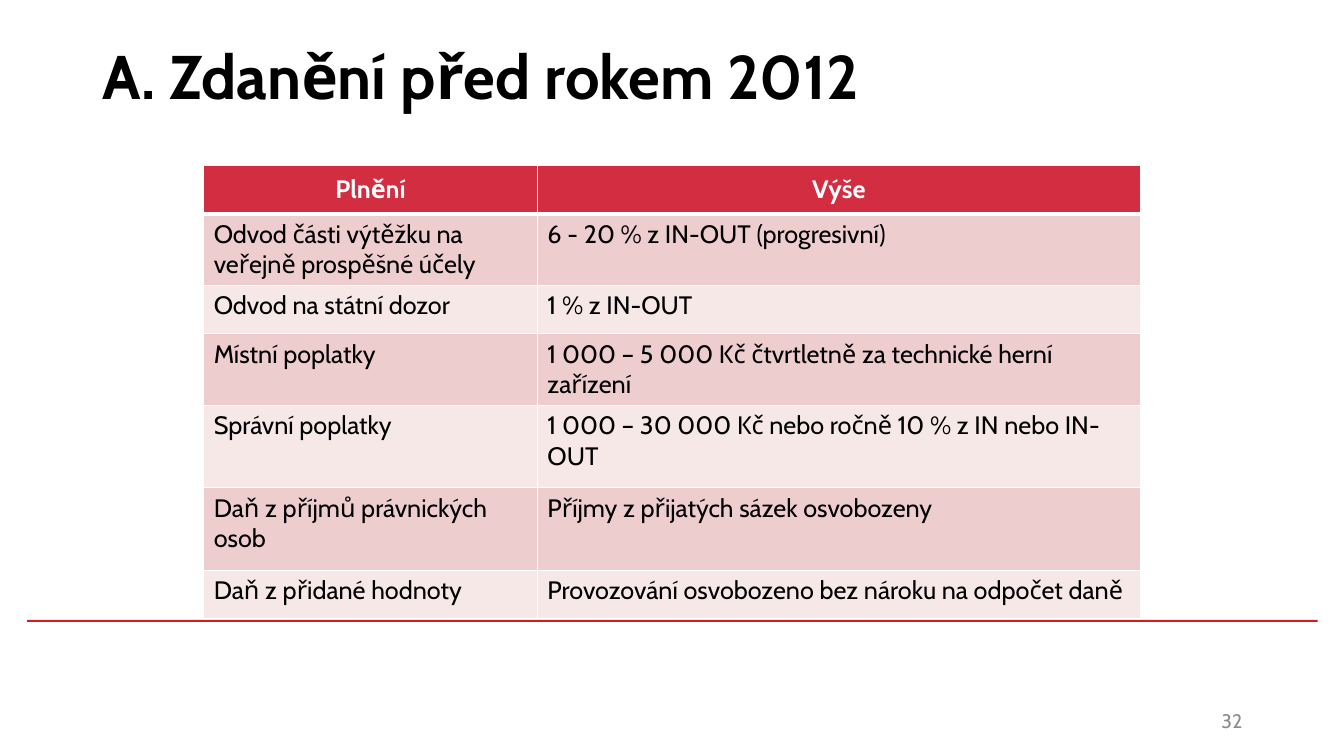
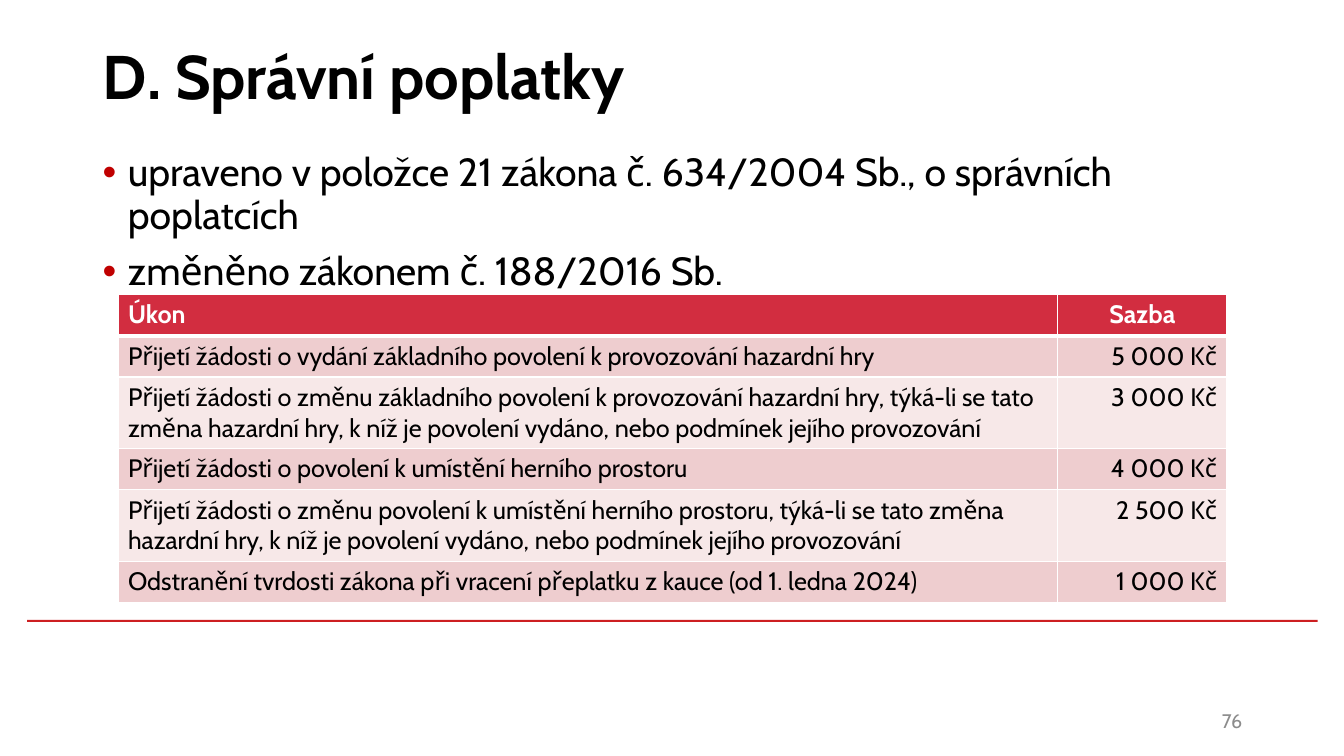
from dataclasses import dataclass

from lxml import etree
from pptx import Presentation
from pptx import util as u
from pptx.dml.color import RGBColor
from pptx.enum import shapes, text
from pptx.oxml import ns


@dataclass(frozen=True)
class Theme:
    font: str = "Cabin"
    ink: str = "000000"
    paper: str = "FFFFFF"
    rule: str = "CD1F21"
    bullet: str = "C00000"
    number: str = "8C8C8C"
    header: str = "D22D40"
    bands: tuple = ("EECDCF", "F7E8E8")
    title_size: int = 44
    body_size: int = 28
    table_size: int = 18
    number_size: int = 14
    border: int = 1
    header_border: int = 3


LEFT, CENTER, RIGHT = text.PP_ALIGN.LEFT, text.PP_ALIGN.CENTER, text.PP_ALIGN.RIGHT
TOP, MIDDLE = text.MSO_ANCHOR.TOP, text.MSO_ANCHOR.MIDDLE


def set_values(target, values):
    for name, value in values.items():
        setattr(target, name, value)


class Deck:
    def __init__(self, theme):
        self.theme = theme
        self.presentation = Presentation()
        set_values(self.presentation, {"slide_width": u.Inches(13.33), "slide_height": u.Inches(7.5)})
        self.slide = None

    def styled_run(self, paragraph, words, size, color, bold=False, align=LEFT):
        paragraph.alignment = align
        run = paragraph.add_run()
        run.text = words
        set_values(run.font, {"name": self.theme.font, "size": u.Pt(size), "bold": bold})
        run.font.color.rgb = RGBColor.from_string(color)

    def text_frame(self, box, anchor):
        shape = self.slide.shapes.add_textbox(*map(u.Inches, box))
        frame = shape.text_frame
        set_values(frame, {"word_wrap": True, "vertical_anchor": anchor})
        return frame

    def start_slide(self, title, number):
        theme = self.theme
        self.slide = self.presentation.slides.add_slide(self.presentation.slide_layouts[6])
        self.rule()
        heading = self.text_frame((0.92, 0.02, 11.5, 1.45), MIDDLE)
        self.styled_run(heading.paragraphs[0], title, theme.title_size, theme.ink, bold=True)
        footer = self.text_frame((9.42, 6.95, 3, 0.4), MIDDLE)
        self.styled_run(footer.paragraphs[0], number, theme.number_size, theme.number, align=RIGHT)

    def rule(self):
        box = map(u.Inches, (0.27, 6.15, 12.8, 0.02))
        shape = self.slide.shapes.add_shape(shapes.MSO_SHAPE.RECTANGLE, *box)
        shape.shadow.inherit = False
        shape.fill.solid()
        shape.fill.fore_color.rgb = RGBColor.from_string(self.theme.rule)
        shape.line.fill.background()

    def bullets(self, box, items):
        frame = self.text_frame(box, TOP)
        for index, words in enumerate(items):
            paragraph = frame.paragraphs[0] if index == 0 else frame.add_paragraph()
            set_values(paragraph, {"line_spacing": 0.9, "space_before": u.Pt(10 if index else 0)})
            properties = paragraph._p.get_or_add_pPr()
            properties.set("marL", str(u.Inches(0.25)))
            properties.set("indent", str(u.Inches(-0.25)))
            color = etree.SubElement(properties, ns.qn("a:buClr"))
            etree.SubElement(color, ns.qn("a:srgbClr"), val=self.theme.bullet)
            etree.SubElement(properties, ns.qn("a:buFont"), typeface="Arial")
            etree.SubElement(properties, ns.qn("a:buChar"), char="•")
            self.styled_run(paragraph, words, self.theme.body_size, self.theme.ink)

    def borders(self, cell, row):
        theme = self.theme
        widths = {
            "L": theme.border,
            "R": theme.border,
            "T": theme.header_border if row == 1 else theme.border,
            "B": theme.header_border if row == 0 else theme.border,
        }
        properties = cell._tc.get_or_add_tcPr()
        for side, width in widths.items():
            line = etree.SubElement(properties, ns.qn(f"a:ln{side}"), w=str(u.Pt(width)))
            fill = etree.SubElement(line, ns.qn("a:solidFill"))
            etree.SubElement(fill, ns.qn("a:srgbClr"), val=theme.paper)

    def table(self, left, top, widths, heights, rows, header_aligns, body_aligns, header_anchor):
        theme = self.theme
        box = map(u.Inches, (left, top, sum(widths), sum(heights)))
        table = self.slide.shapes.add_table(len(rows), len(widths), *box).table
        table.horz_banding = False
        for column, width in zip(table.columns, widths):
            column.width = u.Inches(width)
        for row, (height, entries) in enumerate(zip(heights, rows)):
            table.rows[row].height = u.Inches(height)
            is_header = row == 0
            aligns = header_aligns if is_header else body_aligns
            fill = theme.header if is_header else theme.bands[(row - 1) % 2]
            color = theme.paper if is_header else theme.ink
            for column, (words, align) in enumerate(zip(entries, aligns)):
                cell = table.cell(row, column)
                self.borders(cell, row)
                cell.fill.solid()
                cell.fill.fore_color.rgb = RGBColor.from_string(fill)
                cell.vertical_anchor = header_anchor if is_header else TOP
                paragraph = cell.text_frame.paragraphs[0]
                self.styled_run(paragraph, words, theme.table_size, color, is_header, align)


def main():
    deck = Deck(Theme())

    deck.start_slide("A. Zdanění před rokem 2012", "32")
    taxes = [
        ("Plnění", "Výše"),
        ("Odvod části výtěžku na veřejně prospěšné účely", "6 - 20 % z IN-OUT (progresivní)"),
        ("Odvod na státní dozor", "1 % z IN-OUT"),
        ("Místní poplatky", "1 000 – 5 000 Kč čtvrtletně za technické herní zařízení"),
        ("Správní poplatky", "1 000 – 30 000 Kč nebo ročně 10 % z IN nebo IN-OUT"),
        ("Daň z příjmů právnických osob", "Příjmy z přijatých sázek osvobozeny"),
        ("Daň z přidané hodnoty", "Provozování osvobozeno bez nároku na odpočet daně"),
    ]
    tax_heights = (0.48, 0.71, 0.48, 0.71, 0.82, 0.82, 0.48)
    deck.table(2.02, 1.64, (3.31, 5.98), tax_heights, taxes, (CENTER, CENTER), (LEFT, LEFT), MIDDLE)

    deck.start_slide("D. Správní poplatky", "76")
    deck.bullets((0.92, 1.47, 11.5, 4.57), [
        "upraveno v položce 21 zákona č. 634/2004 Sb., o správních poplatcích",
        "změněno zákonem č. 188/2016 Sb.",
    ])
    fees = [
        ("Úkon", "Sazba"),
        ("Přijetí žádosti o vydání základního povolení k provozování hazardní hry", "5 000 Kč"),
        ("Přijetí žádosti o změnu základního povolení k provozování hazardní hry, týká-li se tato "
         "změna hazardní hry, k níž je povolení vydáno, nebo podmínek jejího provozování", "3 000 Kč"),
        ("Přijetí žádosti o povolení k umístění herního prostoru", "4 000 Kč"),
        ("Přijetí žádosti o změnu povolení k umístění herního prostoru, týká-li se tato změna "
         "hazardní hry, k níž je povolení vydáno, nebo podmínek jejího provozování", "2 500 Kč"),
        ("Odstranění tvrdosti zákona při vracení přeplatku z kauce (od 1. ledna 2024)", "1 000 Kč"),
    ]
    fee_heights = (0.41, 0.41, 0.71, 0.41, 0.71, 0.41)
    deck.table(1.17, 2.92, (9.32, 1.68), fee_heights, fees, (LEFT, CENTER), (LEFT, RIGHT), TOP)

    deck.presentation.save("out.pptx")


if __name__ == "__main__":
    main()
